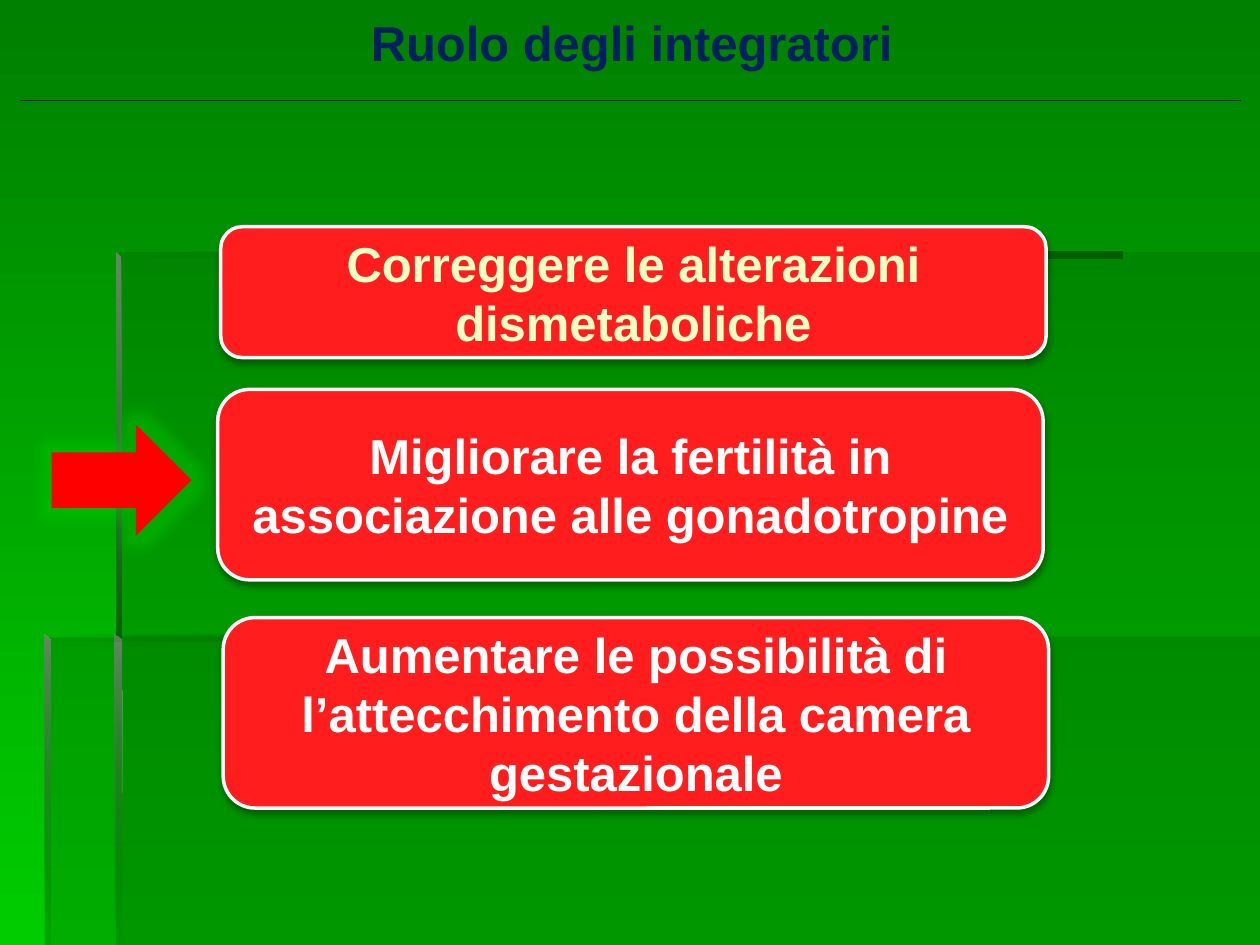
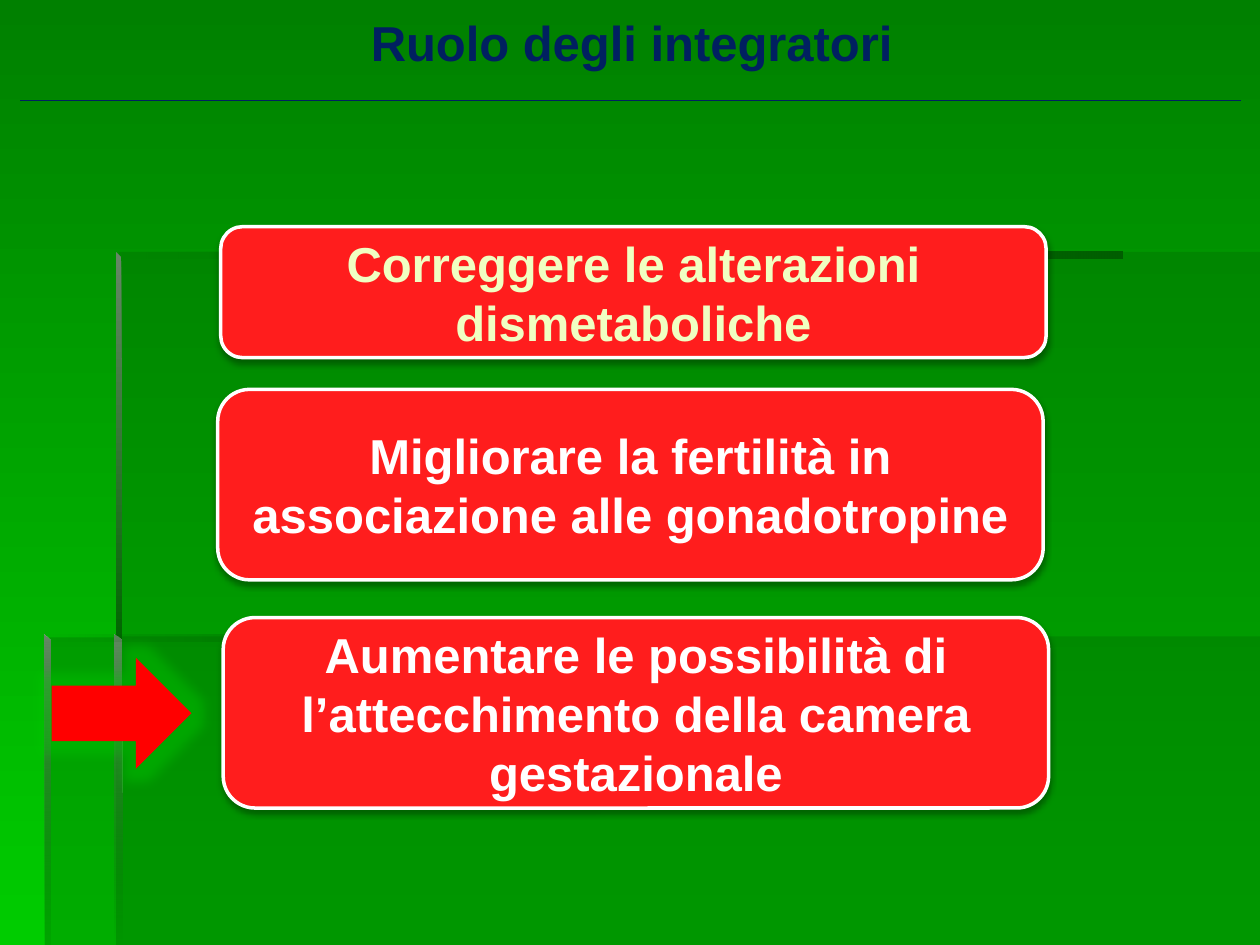
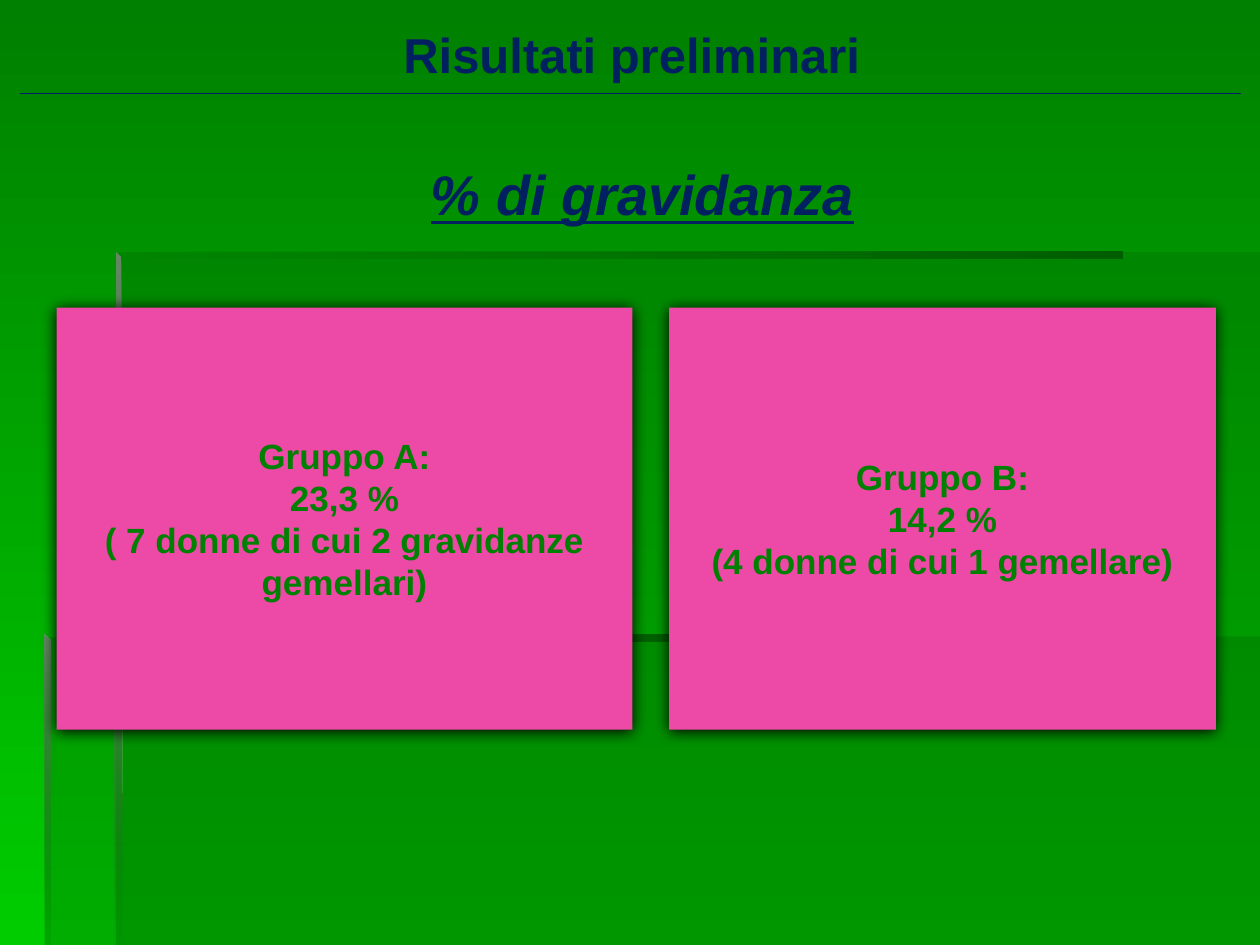
from dataclasses import dataclass

from lxml import etree
from pptx import Presentation
from pptx.dml.color import RGBColor
from pptx.enum.shapes import MSO_CONNECTOR, MSO_SHAPE
from pptx.enum.text import MSO_ANCHOR, MSO_AUTO_SIZE, PP_ALIGN
from pptx.oxml.ns import qn
from pptx.util import Cm, Pt

ROUNDED, RECTANGLE, ARROW = MSO_SHAPE.ROUNDED_RECTANGLE, MSO_SHAPE.RECTANGLE, MSO_SHAPE.RIGHT_ARROW
STRAIGHT = MSO_CONNECTOR.STRAIGHT
TOP, MIDDLE = MSO_ANCHOR.TOP, MSO_ANCHOR.MIDDLE
CENTER = PP_ALIGN.CENTER
NO_AUTOFIT = MSO_AUTO_SIZE.NONE
TITLE_ONLY = 5
WIDTH, HEIGHT = 25.4, 19.05
RIGHTWARD, DOWNWARD = 0, 270


@dataclass(frozen=True)
class Theme:
    font: str = "Arial"
    navy: str = "002060"
    green: str = "008000"
    bright_green: str = "00CC00"
    shade: str = "006600"
    shade_end: str = "005E00"
    highlight: str = "668666"
    red: str = "FF1D1D"
    arrow_red: str = "FF0000"
    pink: str = "ED49A7"
    white: str = "FFFFFF"
    cream: str = "F0FFC2"
    black: str = "000000"
    title_size: int = 28
    subtitle_size: int = 32
    goal_size: int = 28
    group_size: int = 20


class Deck:
    def __init__(self, theme):
        self.theme = theme
        self.slide = None
        self.presentation = Presentation()
        self.presentation.slide_width = Cm(WIDTH)
        self.presentation.slide_height = Cm(HEIGHT)
        background = self.presentation.slide_master.background.fill
        self.gradient(background, theme.green, theme.bright_green, DOWNWARD)

    def gradient(self, fill, start, end, angle):
        fill.gradient()
        fill.gradient_angle = angle
        for stop, color in zip(fill.gradient_stops, (start, end)):
            stop.color.rgb = RGBColor.from_string(color)

    def set_alphas(self, element, alphas):
        for color, alpha in zip(list(element.iter(qn("a:srgbClr"))), alphas):
            if alpha < 100:
                etree.SubElement(color, qn("a:alpha"), val=str(alpha * 1000))

    def add_effect(self, shape, tag, color, alpha, **attributes):
        effects = shape.element.spPr.find(qn("a:effectLst"))
        effect = etree.SubElement(effects, qn(tag), {k: str(v) for k, v in attributes.items()})
        etree.SubElement(effect, qn("a:srgbClr"), val=color)
        self.set_alphas(effect, [alpha])

    def add_shadow(self, shape, alpha, blur, distance):
        self.add_effect(shape, "a:outerShdw", self.theme.black, alpha, blurRad=Pt(blur),
                        dist=Pt(distance), dir=90 * 60000, rotWithShape=0)

    def set_text(self, shape, text, size, color, anchor=MIDDLE, italic=None, underline=None):
        frame = shape.text_frame
        frame.text = text
        frame.word_wrap = True
        frame.auto_size = NO_AUTOFIT
        frame.vertical_anchor = anchor
        for paragraph in frame.paragraphs:
            paragraph.alignment = CENTER
            for run in paragraph.runs:
                font = run.font
                font.name, font.size, font.bold = self.theme.font, Pt(size), True
                font.italic, font.underline = italic, underline
                font.color.rgb = RGBColor.from_string(color)

    def add_slide(self, title, title_top, rule_top):
        layout = self.presentation.slide_layouts[TITLE_ONLY]
        self.slide = self.presentation.slides.add_slide(layout)
        placeholder = self.slide.shapes.title
        placeholder.left, placeholder.top = Cm(0.38), Cm(title_top)
        placeholder.width, placeholder.height = Cm(24.71), Cm(1.35)
        self.set_text(placeholder, title, self.theme.title_size, self.theme.navy, TOP)
        # Rule under the title
        rule = self.slide.shapes.add_connector(
            STRAIGHT, Cm(25.02), Cm(rule_top), Cm(0.41), Cm(rule_top))
        rule.line.color.rgb = RGBColor.from_string(self.theme.navy)
        rule.line.width = Pt(0.75)
        etree.SubElement(rule.element.spPr, qn("a:effectLst"))

    def add_outline(self, points):
        points = [(Cm(x), Cm(y)) for x, y in points]
        builder = self.slide.shapes.build_freeform(*points[0])
        builder.add_line_segments(points[1:], close=True)
        shape = builder.convert_to_shape()
        shape.shadow.inherit = False
        shape.line.fill.background()
        return shape

    def add_panel(self, points):
        panel = self.add_outline(points)
        panel.fill.solid()
        panel.fill.fore_color.rgb = RGBColor.from_string(self.theme.shade)
        self.set_alphas(panel.element.spPr, [30])
        return panel

    def add_edge(self, points, start, end, angle, alphas):
        edge = self.add_outline(points)
        self.gradient(edge.fill, start, end, angle)
        self.set_alphas(edge.element.spPr, alphas)
        return edge

    def add_backdrop(self):
        """Build the stepped panels and keep them on the master."""
        theme = self.theme
        across = (theme.shade, theme.shade_end, RIGHTWARD, (0, 100))
        down = (theme.highlight, theme.shade, DOWNWARD)
        parts = [
            self.add_panel([(2.34, 12.83), (2.34, HEIGHT), (WIDTH, HEIGHT), (WIDTH, 12.83)]),
            self.add_panel([(2.39, 12.85), (0.91, 12.85), (0.91, HEIGHT), (WIDTH, HEIGHT),
                            (WIDTH, 5.08), (2.39, 5.08)]),
            self.add_edge([(2.34, 5.08), (2.34, 5.21), (22.63, 5.21), (22.63, 5.08)], *across),
            self.add_edge([(2.34, 5.08), (2.34, 12.95), (2.46, 12.95), (2.44, 5.18)],
                          *down, (100, 100)),
            self.add_edge([(2.31, HEIGHT), (2.46, HEIGHT), (2.44, 12.9), (2.31, 12.8)],
                          *down, (100, 0)),
            self.add_edge([(0.89, 12.8), (0.89, 12.93), (13.59, 12.93), (13.59, 12.8)], *across),
            self.add_edge([(0.89, 12.8), (0.89, HEIGHT), (1.02, HEIGHT), (1.02, 12.93)],
                          *down, (100, 10)),
        ]
        master_tree = self.presentation.slide_master.shapes.element
        for number, part in enumerate(parts, start=101):
            part.element.nvSpPr.cNvPr.set("id", str(number))
            master_tree.append(part.element)

    def add_filled(self, kind, left, top, width, height, color):
        shape = self.slide.shapes.add_shape(kind, Cm(left), Cm(top), Cm(width), Cm(height))
        shape.shadow.inherit = False
        shape.fill.solid()
        shape.fill.fore_color.rgb = RGBColor.from_string(color)
        shape.line.fill.background()
        return shape

    def add_goal(self, text, left, top, height, color):
        goal = self.add_filled(ROUNDED, left, top, 16.64, height, self.theme.red)
        goal.line.color.rgb = RGBColor.from_string(self.theme.white)
        goal.line.width = Pt(2)
        self.add_shadow(goal, 32, 3.5, 2.2)
        self.set_text(goal, text, self.theme.goal_size, color)

    def add_arrow(self, top):
        arrow = self.add_filled(ARROW, 1.04, top, 2.82, 2.24, self.theme.arrow_red)
        self.add_effect(arrow, "a:glow", self.theme.bright_green, 40, rad=Pt(14))

    def add_group(self, text, left, width):
        group = self.add_filled(RECTANGLE, left, 6.2, width, 8.51, self.theme.pink)
        self.add_shadow(group, 100, 8.5, 1)
        self.set_text(group, text, self.theme.group_size, self.theme.green)

    def add_subtitle(self, text):
        box = self.slide.shapes.add_textbox(Cm(7.67), Cm(3.1), Cm(10.57), Cm(1.63))
        self.set_text(box, text, self.theme.subtitle_size, self.theme.navy, TOP,
                      italic=True, underline=True)


def main():
    theme = Theme()
    deck = Deck(theme)
    goals = [
        ("Correggere le alterazioni dismetaboliche", 4.45, 4.57, 2.64, theme.cream),
        ("Migliorare la fertilità in associazione alle gonadotropine",
         4.39, 7.85, 3.84, theme.white),
        ("Aumentare le possibilità di l’attecchimento della camera gestazionale",
         4.5, 12.45, 3.84, theme.white),
    ]

    # Role of supplements: the arrow moves from the second goal to the third
    for arrow_top in (8.56, 13.26):
        deck.add_slide("Ruolo degli integratori", 0.13, 2.03)
        for goal in goals:
            deck.add_goal(*goal)
        deck.add_arrow(arrow_top)

    # Preliminary results
    deck.add_slide("Risultati preliminari", 0.36, 1.88)
    deck.add_group("Gruppo A:\n23,3 %\n( 7 donne di cui 2 gravidanze gemellari)", 1.14, 11.61)
    deck.add_group("Gruppo B:\n14,2 %\n(4 donne di cui 1 gemellare)", 13.49, 11.02)
    deck.add_subtitle("% di gravidanza")

    # Shared backdrop
    deck.add_backdrop()
    deck.presentation.save("out.pptx")


if __name__ == "__main__":
    main()
